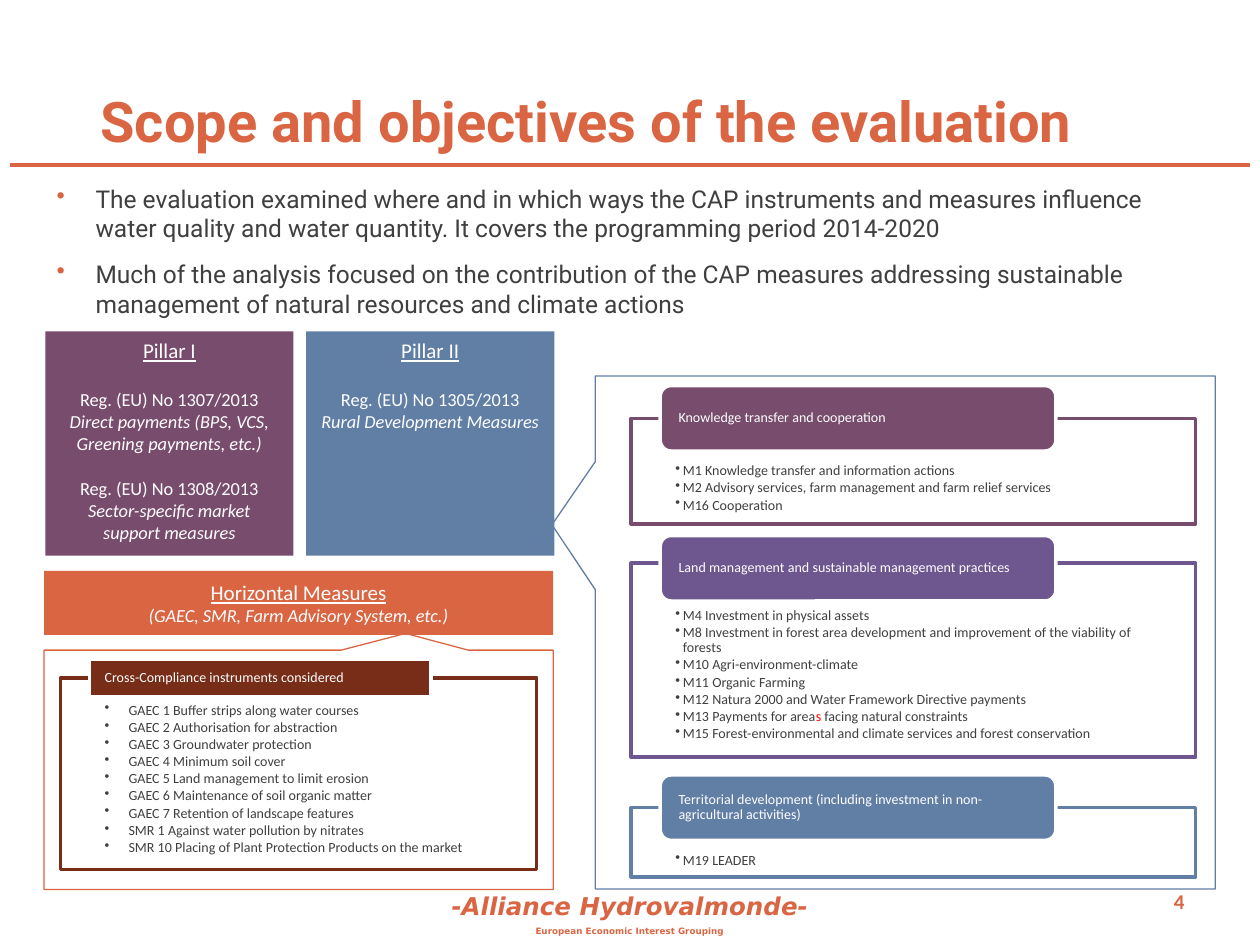
from lxml import etree
from pptx import Presentation
from pptx.dml.color import RGBColor
from pptx.enum.shapes import MSO_CONNECTOR, MSO_SHAPE
from pptx.enum.text import MSO_ANCHOR, PP_ALIGN
from pptx.oxml.ns import qn
from pptx.util import Inches, Pt

RECT, ROUND = MSO_SHAPE.RECTANGLE, MSO_SHAPE.ROUNDED_RECTANGLE
CALLOUT = MSO_SHAPE.RECTANGULAR_CALLOUT
TOP, MIDDLE = MSO_ANCHOR.TOP, MSO_ANCHOR.MIDDLE
LEFT, CENTER, RIGHT = PP_ALIGN.LEFT, PP_ALIGN.CENTER, PP_ALIGN.RIGHT
COLORS = {
    "orange": "DA6542", "plum": "784C6C", "blue": "617EA5", "violet": "6E568F",
    "brown": "772D17", "white": "FFFFFF", "text": "3F3F3F", "red": "FF0000",
}
DEFAULT_INSETS = (0.1, 0.05, 0.1, 0.05)


def add_box(kind, at, fill=None, line=None, weight=2):
    frame = [Inches(v) for v in at]
    if kind is None:
        return slide.shapes.add_textbox(*frame)
    box = slide.shapes.add_shape(kind, *frame)
    box.shadow.inherit = False
    if fill:
        box.fill.solid()
        box.fill.fore_color.rgb = RGBColor.from_string(COLORS[fill])
    else:
        box.fill.background()
    if line:
        box.line.color.rgb = RGBColor.from_string(COLORS[line])
        box.line.width = Pt(weight)
    else:
        box.line.fill.background()
    return box


def write(box, lines, font, color, insets=DEFAULT_INSETS, anchor=TOP, indent=0, bullet_color=None, **layout):
    frame = box.text_frame
    frame.word_wrap = True
    frame.vertical_anchor = anchor
    for side, inset in zip(("left", "top", "right", "bottom"), insets):
        setattr(frame, f"margin_{side}", Inches(inset))
    for i, (runs, spacing) in enumerate(lines):
        paragraph = frame.add_paragraph() if i else frame.paragraphs[0]
        for name, value in {"alignment": LEFT, **layout, **spacing}.items():
            setattr(paragraph, name, value)
        for words, changes in runs:
            run = paragraph.add_run()
            run.text = words
            values = {**font, **changes}
            ink = values.pop("color", color)
            for name, value in values.items():
                setattr(run.font, name, value)
            run.font.color.rgb = RGBColor.from_string(COLORS[ink])
        if indent:
            props = paragraph._p.get_or_add_pPr()
            props.set("marL", str(Inches(indent)))
            props.set("indent", str(-Inches(indent)))
            if bullet_color:
                tint = etree.SubElement(props, qn("a:buClr"))
                etree.SubElement(tint, qn("a:srgbClr"), val=COLORS[bullet_color])
            etree.SubElement(props, qn("a:buChar"), char="•")


prs = Presentation()
prs.slide_width, prs.slide_height = Inches(10), Inches(7.5)
slide = prs.slides.add_slide(prs.slide_layouts[6])

footer = add_box(None, (0, 7.02, 10, 0.48))
write(footer, [
    ([("-Alliance Hydrovalmonde-", {"size": Pt(14), "italic": True})], {}),
    ([("European Economic Interest Grouping", {"size": Pt(5)})], {}),
], {"name": "DejaVu Sans", "bold": True}, "orange", alignment=CENTER, space_before=Pt(3))

title_rule = slide.shapes.add_connector(
    MSO_CONNECTOR.STRAIGHT, Inches(0.08), Inches(1.31), Inches(9.92), Inches(1.31))
title_rule.line.color.rgb = RGBColor.from_string(COLORS["orange"])
title_rule.line.width = Pt(2.75)
etree.SubElement(title_rule._element.spPr, qn("a:effectLst"))

page_number = add_box(None, (7.17, 6.95, 2.33, 0.4))
write(page_number, [([("4", {})], {})], {"name": "Calibri", "size": Pt(12), "bold": True},
      "orange", anchor=MIDDLE, alignment=RIGHT)

title = add_box(None, (0.7, 0.67, 9, 0.56))
write(title, [([("Scope and objectives of the evaluation", {})], {})],
      {"name": "Roboto", "size": Pt(32), "bold": True}, "orange", anchor=MIDDLE)

scope = add_box(None, (0.35, 1.41, 9.29, 1.88))
write(scope, [
    ([("The evaluation examined where and in which ways the CAP instruments and measures influence "
       "water quality and water quantity. It covers the programming period 2014-2020", {})], {}),
    ([("Much of the analysis focused on the contribution of the CAP measures addressing sustainable "
       "management of natural resources and climate actions", {})], {"space_before": Pt(9.4)}),
], {"name": "Roboto", "size": Pt(14)}, "text", indent=0.31, bullet_color="orange")

heading = {"size": Pt(12), "underline": True}
italic = {"italic": True}
after_heading = {"space_before": Pt(14.6)}
after_regulation = {"space_before": Pt(12.8)}
blocks = [
    ((2.43, 2.63, 1.97, 1.78), "blue", TOP, [
        ([("Pillar II", heading)], {}),
        ([("Reg. (EU) No 1305/2013", {})], after_heading),
        ([("Rural Development Measures", italic)], {}),
    ]),
    ((0.36, 2.63, 1.97, 1.78), "plum", TOP, [
        ([("Pillar I", heading)], {}),
        ([("Reg. (EU) No 1307/2013", {})], after_heading),
        ([("Direct payments (BPS, VCS, Greening payments, etc.)", italic)], {}),
        ([("Reg. (EU) No 1308/2013", {})], after_regulation),
        ([("Sector-specific market support measures", italic)], {}),
    ]),
    ((0.35, 4.53, 4.04, 0.51), "orange", MIDDLE, [
        ([("Horizontal Measures", heading)], {}),
        ([("(GAEC, SMR, Farm Advisory System, etc.)", italic)], {}),
    ]),
]
callouts = [
    ((5.15, 2.56, 4.07, 4.92), 90, (-0.21, 0.57), "blue"),
    ((0.35, 5.16, 4.04, 1.9), 180, (-0.21, 0.57), "orange"),
]
for at, rotation, tip, color in callouts:
    callout = add_box(CALLOUT, at, line=color, weight=0.75)
    callout.rotation = rotation
    for i, offset in enumerate(tip):
        callout.adjustments[i] = offset
for at, color, anchor, lines in blocks:
    block = add_box(RECT, at, color)
    write(block, lines, {"name": "Calibri", "size": Pt(10.5)}, "white", anchor=anchor, alignment=CENTER)

panels = [
    ((5.01, 3.32, 4.48, 0.84), ROUND, (5.24, 3.06, 3.14, 0.52), "plum", 0.36, 0.06,
     "Knowledge transfer and cooperation", [
         "M1 Knowledge transfer and information actions",
         "M2 Advisory services, farm management and farm relief services",
         "M16 Cooperation"]),
    ((5.01, 4.47, 4.48, 1.54), ROUND, (5.24, 4.25, 3.14, 0.52), "violet", 0.36, 0.06,
     "Land management and sustainable management practices", [
         "M4 Investment in physical assets",
         "M8 Investment in forest area development and improvement of the viability of forests",
         "M10 Agri-environment-climate",
         "M11 Organic Farming",
         "M12 Natura 2000 and Water Framework Directive payments",
         [("M13 Payments for area", {}), ("s", {"color": "red"}), (" facing natural constraints", {})],
         "M15 Forest-environmental and climate services and forest conservation"]),
    ((5.01, 6.41, 4.48, 0.55), ROUND, (5.24, 6.15, 3.14, 0.52), "blue", 0.36, 0.06,
     "Territorial development (including investment in non-agricultural activities)", ["M19 LEADER"]),
    ((0.48, 5.38, 3.78, 1.52), RECT, (0.71, 5.23, 2.71, 0.3), "brown", 0.2, 0.19,
     "Cross-Compliance instruments considered", [
         "GAEC 1 Buffer strips along water courses",
         "GAEC 2 Authorisation for abstraction",
         "GAEC 3 Groundwater protection",
         "GAEC 4 Minimum soil cover",
         "GAEC 5 Land management to limit erosion",
         "GAEC 6 Maintenance of soil organic matter",
         "GAEC 7 Retention of landscape features",
         "SMR 1 Against water pollution by nitrates",
         "SMR 10 Placing of Plant Protection Products on the market"]),
]
small = {"name": "Calibri", "size": Pt(8)}
for at, tab_kind, tab_at, color, top_inset, indent, theme, measures in panels:
    panel = add_box(RECT, at, "white", color)
    white = panel._element.spPr.find(qn("a:solidFill"))[0]
    etree.SubElement(white, qn("a:alpha"), val="90000")
    lines = [([(m, {})] if isinstance(m, str) else m, {}) for m in measures]
    write(panel, lines, small, "text", (0.35, top_inset, 0.35, 0.06), indent=indent,
          line_spacing=0.9, space_after=Pt(1.2))
    tab = add_box(tab_kind, tab_at, color, "white")
    write(tab, [([(theme, {})], {})], small, "white", (0.12, 0, 0.12, 0), MIDDLE, line_spacing=0.9)

prs.save("out.pptx")
